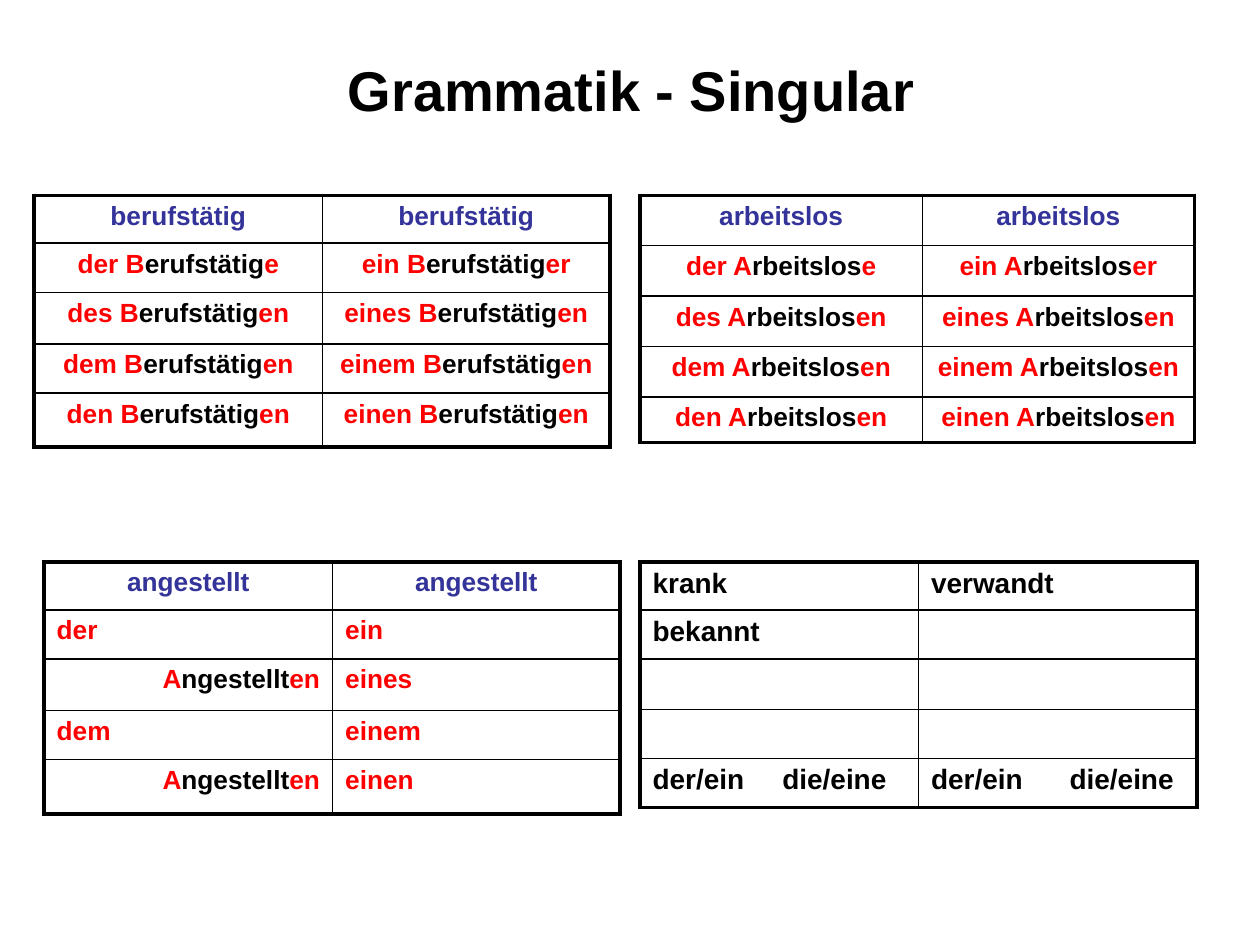
"""Build a slide of German adjectival noun declensions in the singular."""
from pptx import Presentation
from pptx import util as u
from pptx.dml.color import RGBColor
from pptx.enum import text
from pptx.oxml.ns import qn
from lxml import etree

FONT = "Arial"
BLACK, RED, BLUE = "000000", "FF0000", "333399"
LEFT, CENTER, RIGHT = text.PP_ALIGN.LEFT, text.PP_ALIGN.CENTER, text.PP_ALIGN.RIGHT
THIN, THICK = 1, 2.25

TITLE = "Grammatik - Singular"
ARTICLES = [("der", "ein"), ("des", "eines"), ("dem", "einem"), ("den", "einen")]
ENDINGS = [("e", "er")] + [("en", "en")] * 3
CASE_ROWS = [0.38, 0.39, 0.41, 0.39, 0.43]


def header(word):
    return [(CENTER, [(word, BLUE)])] * 2


def noun(initial, stem, ending):
    return [(initial, RED), (stem, BLACK), (ending, RED)]


def declension(adjective, initial, stem):
    rows = [header(adjective)]
    for articles, endings in zip(ARTICLES, ENDINGS):
        rows.append([(CENTER, noun(f"{a} {initial}", stem, e))
                     for a, e in zip(articles, endings)])
    return rows


def gap_exercise(adjective, initial, stem):
    rows = [header(adjective)]
    for i, (definite, indefinite) in enumerate(ARTICLES):
        first = (RIGHT, noun(initial, stem, "en")) if i % 2 else (LEFT, [(definite, RED)])
        rows.append([first, (LEFT, [(indefinite, RED)])])
    return rows


def word_list(rows):
    return [[(LEFT, [(word, BLACK)] if word else []) for word in row] for row in rows]


WORDS = [("krank", "verwandt"), ("bekannt", ""), ("", ""), ("", ""),
         ("der/ein\tdie/eine", "der/ein\tdie/eine")]
TABLES = [
    dict(at=(0.27, 1.55), cols=[2.29, 2.28], heights=CASE_ROWS, size=15,
         rows=declension("berufstätig", "B", "erufstätig")),
    dict(at=(5.08, 1.55), cols=[2.24, 2.16], heights=[0.4] * 4 + [0.36], size=15,
         rows=declension("arbeitslos", "A", "rbeitslos")),
    dict(at=(5.08, 4.46), cols=[2.21, 2.21], heights=[0.38, 0.39, 0.4, 0.39, 0.39],
         size=16, rows=word_list(WORDS), tabs=[1.03, 1.1]),
    dict(at=(0.35, 4.46), cols=[2.29, 2.28], heights=CASE_ROWS, size=15,
         rows=gap_exercise("angestellt", "A", "ngestellt")),
]


def style(font, size, color):
    font.name, font.size, font.bold = FONT, u.Pt(size), True
    font.color.rgb = RGBColor.from_string(color)


def add_runs(p, runs, size):
    for words, color in runs:
        r = p.add_run()
        r.text = words
        style(r.font, size, color)


def set_border(cell, side, width):
    ln = etree.SubElement(cell._tc.get_or_add_tcPr(), qn(f"a:{side}"), w=str(u.Pt(width)))
    fill = etree.SubElement(ln, qn("a:solidFill"))
    etree.SubElement(fill, qn("a:srgbClr"), val=BLACK)


def add_tab_stop(p, position):
    tabs = etree.SubElement(p._p.get_or_add_pPr(), qn("a:tabLst"))
    etree.SubElement(tabs, qn("a:tab"), pos=str(u.Inches(position)), algn="l")


def add_grid(s, at, cols, heights, size, rows, tabs=None):
    x, y = at
    table = s.shapes.add_table(len(rows), len(cols), u.Inches(x), u.Inches(y),
                               u.Inches(sum(cols)), u.Inches(sum(heights))).table
    table.first_row = table.horz_banding = False
    for column, width in zip(table.columns, cols):
        column.width = u.Inches(width)
    for row, height in zip(table.rows, heights):
        row.height = u.Inches(height)
    for i, row in enumerate(rows):
        for j, (align, runs) in enumerate(row):
            cell = table.cell(i, j)
            outer = {"lnL": j == 0, "lnR": j == len(cols) - 1,
                     "lnT": i == 0, "lnB": i == len(rows) - 1}
            for side, is_outer in outer.items():
                set_border(cell, side, THICK if is_outer else THIN)
            cell.fill.background()
            p = cell.text_frame.paragraphs[0]
            p.alignment = align
            if any("\t" in words for words, _ in runs):
                add_tab_stop(p, tabs[j])
            if not runs:
                style(p.font, size, BLACK)
            add_runs(p, runs, size)


def main():
    prs = Presentation()
    prs.slide_width, prs.slide_height = u.Inches(10), u.Inches(7.5)
    s = prs.slides.add_slide(prs.slide_layouts[5])
    title = s.shapes.title
    title.left, title.top = u.Inches(0.51), u.Inches(0.28)
    title.width, title.height = u.Inches(9), u.Inches(0.85)
    tf = title.text_frame
    tf.vertical_anchor = text.MSO_ANCHOR.MIDDLE
    p = tf.paragraphs[0]
    p.alignment = CENTER
    add_runs(p, [(TITLE, BLACK)], 32)
    for table in TABLES:
        add_grid(s, **table)
    prs.save("out.pptx")


if __name__ == "__main__":
    main()
